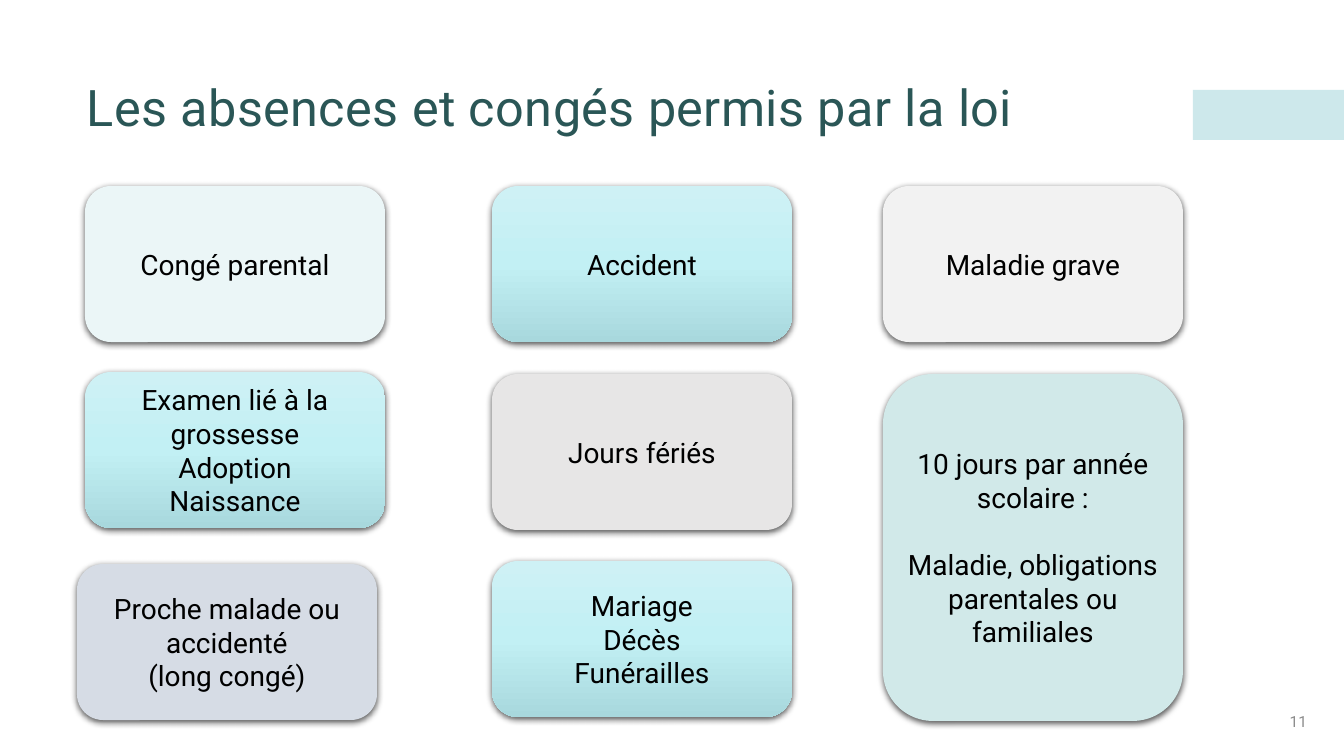
"""Build the slide listing the absences and leaves permitted by law."""
from lxml.etree import SubElement
from pptx import Presentation
from pptx.dml.color import RGBColor
from pptx.enum.shapes import MSO_SHAPE as Shape
from pptx.enum.text import MSO_ANCHOR as Anchor, PP_ALIGN as Align
from pptx.oxml.ns import qn
from pptx.util import Pt

PX = 914400 / 100.8
CARD_WIDTH, CARD_HEIGHT, TALL_HEIGHT = 300, 156, 347
LEFT, MIDDLE, RIGHT = 85, 492, 883
GRADIENT = [(0, "CEF1F5"), (50000, "C2F0F4"), (100000, "A8D8DD")]


def color(value):
    return RGBColor.from_string(value)


def write(shape, text, size=20, fill="000000", align=Align.CENTER, anchor=Anchor.MIDDLE,
          gap=0, after=0, line=1.0, spacing=0):
    frame = shape.text_frame
    frame.word_wrap = True
    frame.vertical_anchor = anchor
    for index, words in enumerate(text.split("\n")):
        paragraph = frame.add_paragraph() if index else frame.paragraphs[0]
        paragraph.alignment = align
        paragraph.line_spacing = line
        paragraph.space_before = Pt(gap if index else 0)
        paragraph.space_after = Pt(after)
        run = paragraph.add_run()
        run.text = words
        run.font.name = "Roboto"
        run.font.size = Pt(size)
        run.font.color.rgb = color(fill)
        if spacing:
            run.font._element.set("spc", str(spacing))


presentation = Presentation()
presentation.slide_width = round(1344 * PX)
presentation.slide_height = round(756 * PX)
slide = presentation.slides.add_slide(presentation.slide_layouts[6])

accent = slide.shapes.add_shape(
    Shape.RECTANGLE, *[round(n * PX) for n in (1193, 90, 151, 50)])
accent.shadow.inherit = False
accent.line.fill.background()
accent.fill.solid()
accent.fill.fore_color.rgb = color("9CD3D9")
accent_color = accent._element.spPr.find(".//" + qn("a:srgbClr"))
SubElement(accent_color, qn("a:alpha"), val="50000")

title = slide.shapes.add_textbox(*[round(n * PX) for n in (77, 65, 1171, 77)])
write(title, "Les absences et congés permis par la loi", size=36, fill="2A5656",
      align=Align.LEFT, anchor=Anchor.BOTTOM, line=0.9, spacing=30)

number = slide.shapes.add_textbox(*[round(n * PX) for n in (1260, 701, 57, 40)])
write(number, "11", size=11, fill="8C8C8C", align=Align.RIGHT, after=6)

cards = [
    (LEFT, 186, CARD_HEIGHT, "EBF6F7", "Congé parental", 0),
    (LEFT, 372, CARD_HEIGHT, GRADIENT, "Examen lié à la grossesse\nAdoption\nNaissance", 0),
    (77, 564, CARD_HEIGHT, "D6DCE5", "Proche malade ou accidenté\n(long congé)", 0),
    (MIDDLE, 186, CARD_HEIGHT, GRADIENT, "Accident", 0),
    (MIDDLE, 374, CARD_HEIGHT, "E7E6E6", "Jours fériés", 0),
    (MIDDLE, 561, CARD_HEIGHT, GRADIENT, "Mariage\nDécès\nFunérailles", 0),
    (RIGHT, 186, CARD_HEIGHT, "F2F2F2", "Maladie grave", 0),
    (RIGHT, 374, TALL_HEIGHT, "D1E9E9",
     "10 jours par année scolaire :\nMaladie, obligations parentales ou familiales", 24),
]
for left, top, height, fill, text, gap in cards:
    card = slide.shapes.add_shape(
        Shape.ROUNDED_RECTANGLE, *[round(n * PX) for n in (left, top, CARD_WIDTH, height)])
    properties = card._element.spPr
    card.line.fill.background()
    if fill is GRADIENT:
        card.fill.gradient()
        card.fill.gradient_angle = 270
        stops = properties.find(".//" + qn("a:gsLst"))
        stops.clear()
        for position, stop_color in GRADIENT:
            stop = SubElement(stops, qn("a:gs"), pos=str(position))
            SubElement(stop, qn("a:srgbClr"), val=stop_color)
    else:
        card.fill.solid()
        card.fill.fore_color.rgb = color(fill)
    card.shadow.inherit = False
    shadow = SubElement(properties.find(qn("a:effectLst")), qn("a:outerShdw"),
                        blurRad=str(Pt(4.5)), dist=str(Pt(1.5)), dir="5400000",
                        algn="ctr", rotWithShape="0")
    shadow_color = SubElement(shadow, qn("a:srgbClr"), val="000000")
    SubElement(shadow_color, qn("a:alpha"), val="63000")
    write(card, text, gap=gap)

presentation.save("out.pptx")
